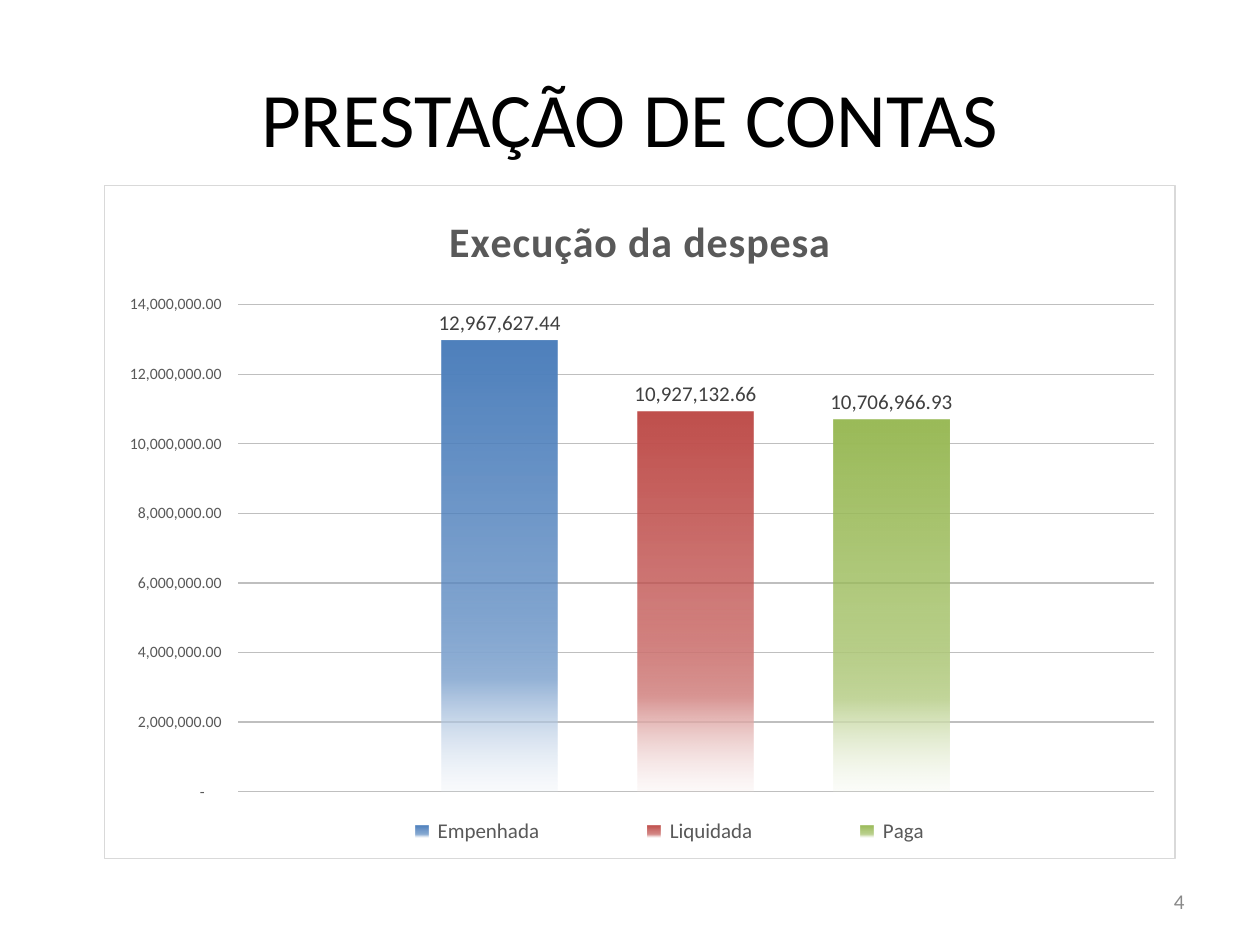
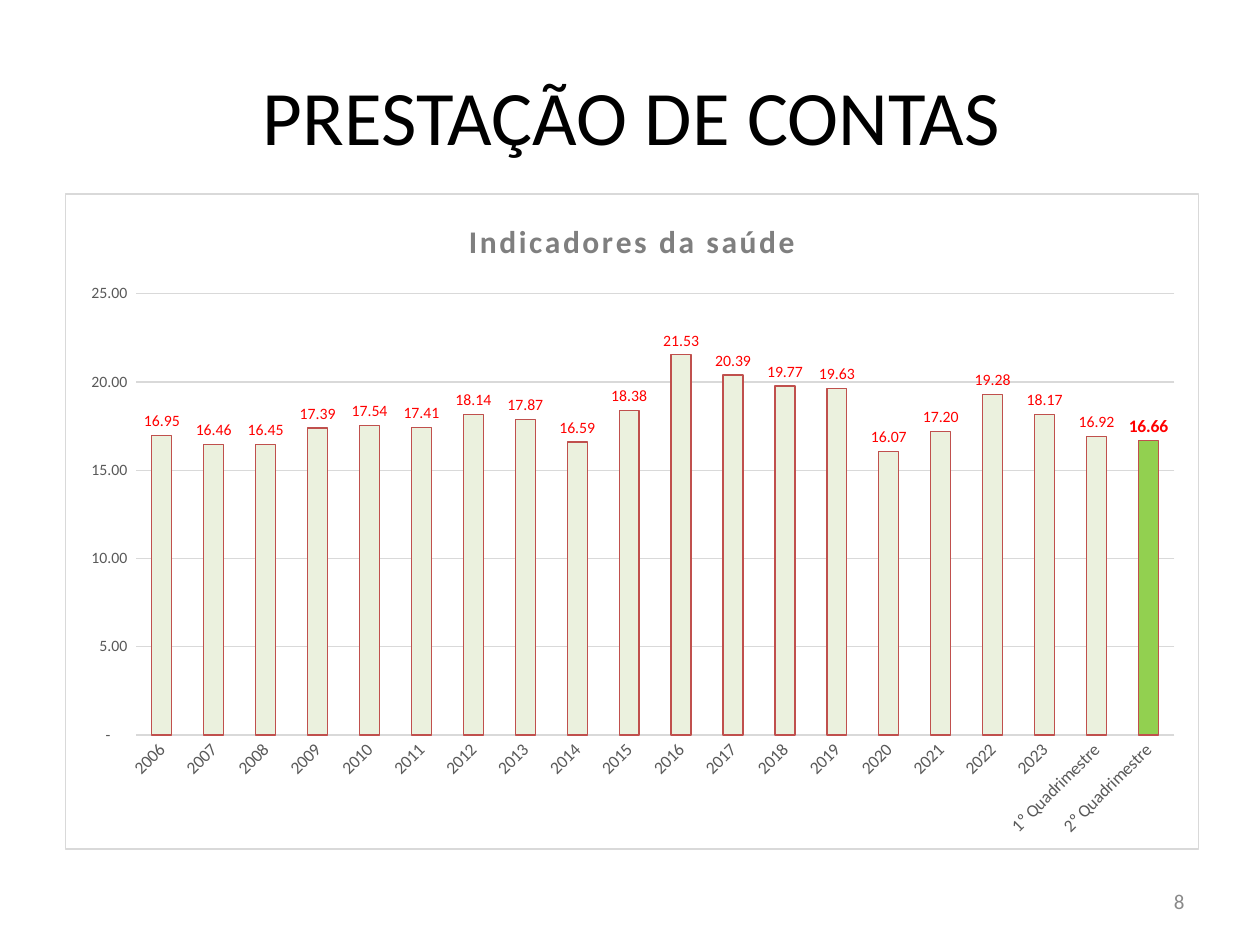
import pptx
import pptx.util
import pptx.dml.color
import pptx.enum.text
import pptx.enum.chart
import pptx.enum.shapes
import pptx.chart.data
import pptx.oxml
from dataclasses import dataclass

Cm, Pt = pptx.util.Cm, pptx.util.Pt
TICK = pptx.enum.chart.XL_TICK_MARK
LABEL = pptx.enum.chart.XL_LABEL_POSITION
ALIGN = pptx.enum.text.PP_ALIGN

# Content
TITLE = "PRESTAÇÃO DE CONTAS"
FORMAT = '_(* #,##0.00_);_(* \\(#,##0.00\\);_(* "-"??_);_(@_)'

SPEND = {
    "page": "4", "head": (1.27, 0.76), "box": (2.1, 3.73, 21.6, 13.59),
    "title": ("Execução da despesa", 24, "595959", 50),
    "cats": ["1"],
    "data": [(" Empenhada ", [12967627.44]),
             (" Liquidada ", [10927132.66]),
             (" Paga ", [10706966.93])],
    "top": 14000000, "step": 2000000, "grid": "BFBFBF",
    "gap": 355, "over": -70, "plot": (0.124, 0.177, 0.856, 0.724),
    "key": (0.2, 0.93, 0.66, 0.06),
    "label": (12, "404040"), "tick": TICK.OUTSIDE,
}
HEALTH = {
    "page": "8", "head": (1.3, 0.72), "box": (1.31, 3.9, 22.86, 13.23),
    "title": ("Indicadores da saúde", 18, "7F7F7F", 150),
    "cats": [str(year) for year in range(2006, 2024)]
            + ["1º Quadrimestre", "2º Quadrimestre"],
    "data": [("Series 1", [16.95, 16.46, 16.45, 17.39, 17.54, 17.41, 18.14,
                           17.87, 16.59, 18.38, 21.53, 20.39, 19.77, 19.63,
                           16.07, 17.20, 19.28, 18.17, 16.92, 16.66])],
    "top": 25, "step": 5, "grid": "D9D9D9",
    "gap": 160, "over": 0, "plot": (0.062, 0.152, 0.917, 0.674),
    "label": (9, "FF0000"), "tick": TICK.NONE,
}


@dataclass(frozen=True)
class Theme:
    font: str = "Calibri"
    ink: str = "000000"
    paper: str = "FFFFFF"
    gray: str = "595959"
    page: str = "898989"
    frame: str = "D9D9D9"
    bar: str = "EBF1DE"
    edge: str = "C0504D"
    last: str = "92D050"
    head_size: int = 44
    page_size: int = 12
    key_size: int = 12
    base_size: int = 10
    axis_size: int = 9
    # Each fade runs from a full tone through a mid tone to a pale one
    fades: tuple = (("4F81BD", "95B3D7", "DCE6F2"),
                    ("C0504D", "D99694", "F2DCDB"),
                    ("9BBB59", "C3D69B", "EBF1DE"))


theme = Theme()
SPACE = " ".join(f'xmlns:{key}="http://schemas.openxmlformats.org/drawingml/2006/{name}"'
                 for key, name in (("a", "main"), ("c", "chart")))


def rgb(tone):
    return pptx.dml.color.RGBColor.from_string(tone)


def style(font, size, tone, bold=False):
    font.name, font.size, font.bold = theme.font, Pt(size), bold
    font.color.rgb = rgb(tone)


def make(xml):
    return pptx.oxml.parse_xml(xml.replace(">", f" {SPACE}>", 1))


# Text shared by the slides
def write(shape, text, size, tone, align):
    frame = shape.text_frame
    frame.word_wrap = True
    frame.vertical_anchor = pptx.enum.text.MSO_ANCHOR.MIDDLE
    line = frame.paragraphs[0]
    line.alignment = align
    run = line.add_run()
    run.text = text
    style(run.font, size, tone)


def add_head(slide, place):
    shape = slide.shapes.add_shape(
        pptx.enum.shapes.MSO_SHAPE.RECTANGLE,
        *map(Cm, (*place, 22.86, 3.18)))
    shape.shadow.inherit = False
    shape.fill.solid()
    shape.fill.fore_color.rgb = rgb(theme.paper)
    shape.line.fill.background()
    write(shape, TITLE, theme.head_size, theme.ink, ALIGN.CENTER)


def add_page(slide, text):
    shape = slide.shapes.add_textbox(*map(Cm, (18.2, 17.66, 5.93, 1.01)))
    write(shape, text, theme.page_size, theme.page, ALIGN.RIGHT)


# Chart parts
def fade(series, tones):
    full, mid, pale = tones
    stops = ((0, full, 100), (51, full, 75), (75, mid, 100), (100, pale, 15))
    marks = "".join(
        f'<a:gs pos="{at * 1000}"><a:srgbClr val="{tone}">'
        f'<a:alpha val="{show * 1000}"/></a:srgbClr></a:gs>'
        for at, tone, show in stops)
    shape = series._element.get_or_add_spPr()
    shape.append(make(f'<a:gradFill><a:gsLst>{marks}</a:gsLst>'
                      '<a:lin ang="5400000" scaled="0"/></a:gradFill>'))
    series.format.line.fill.background()


def lay_out(part, spot, box, target=""):
    for old in part.findall(pptx.oxml.ns.qn("c:layout")):
        part.remove(old)
    sides = "".join(f'<c:{key} val="{size}"/>' for key, size in zip("xywh", box))
    part.insert(spot, make(
        f'<c:layout><c:manualLayout>{target}<c:xMode val="edge"/>'
        f'<c:yMode val="edge"/>{sides}</c:manualLayout></c:layout>'))


def frame_chart(chart, plot):
    area = chart._chartSpace.chart
    area.addnext(make(
        f'<c:spPr><a:solidFill><a:srgbClr val="{theme.paper}"/></a:solidFill>'
        f'<a:ln w="9525"><a:solidFill><a:srgbClr val="{theme.frame}"/>'
        '</a:solidFill></a:ln></c:spPr>'))
    lay_out(area.plotArea, 0, plot, '<c:layoutTarget val="inner"/>')


def draw_chart(slide, part):
    data = pptx.chart.data.CategoryChartData(number_format=FORMAT)
    data.categories = part["cats"]
    for name, nums in part["data"]:
        data.add_series(name, nums)
    chart = slide.shapes.add_chart(
        pptx.enum.chart.XL_CHART_TYPE.COLUMN_CLUSTERED,
        *map(Cm, part["box"]), data).chart
    style(chart.font, theme.base_size, theme.ink)
    frame_chart(chart, part["plot"])

    # Title
    text, size, tone, track = part["title"]
    run = chart.chart_title.text_frame.paragraphs[0].add_run()
    run.text = text
    style(run.font, size, tone, True)
    run._r.get_or_add_rPr().set("spc", str(track))
    chart.chart_title.include_in_layout = False

    # Value axis
    axis = chart.value_axis
    axis.minimum_scale, axis.maximum_scale = 0, part["top"]
    axis.major_unit = part["step"]
    axis.major_tick_mark = part["tick"]
    axis.format.line.fill.background()
    style(axis.tick_labels.font, theme.axis_size, theme.gray)
    axis.tick_labels.number_format = FORMAT
    axis.tick_labels.number_format_is_linked = False
    grid = axis.major_gridlines.format.line
    grid.width, grid.color.rgb = Pt(0.75), rgb(part["grid"])

    # Bars and labels
    plot = chart.plots[0]
    plot.vary_by_categories = False
    plot.gap_width, plot.overlap = part["gap"], part["over"]
    for series in plot.series:
        series.invert_if_negative = False
        tags = series.data_labels
        tags.show_value = True
        tags.position = LABEL.OUTSIDE_END
        tags.number_format, tags.number_format_is_linked = FORMAT, False
        style(tags.font, *part["label"])
    return chart


def draw_spend(slide):
    chart = draw_chart(slide, SPEND)
    chart.category_axis.visible = False
    for series, tones in zip(chart.plots[0].series, theme.fades):
        fade(series, tones)
    chart.has_legend = True
    key = chart.legend
    key.position = pptx.enum.chart.XL_LEGEND_POSITION.BOTTOM
    key.include_in_layout = False
    style(key.font, theme.key_size, theme.gray)
    lay_out(key._element, 1, SPEND["key"])


def draw_health(slide):
    chart = draw_chart(slide, HEALTH)
    chart.has_legend = False
    axis = chart.category_axis
    axis.major_tick_mark = TICK.NONE
    axis.format.line.fill.background()
    style(axis.tick_labels.font, theme.base_size, theme.gray)
    axis._element.txPr.bodyPr.set("rot", "-2700000")

    # The latest bar stands out
    series = chart.plots[0].series[0]
    last = series.points[len(HEALTH["cats"]) - 1]
    for item, tone in ((series, theme.bar), (last, theme.last)):
        item.format.fill.solid()
        item.format.fill.fore_color.rgb = rgb(tone)
        item.format.line.width = Pt(0.75)
        item.format.line.color.rgb = rgb(theme.edge)
    style(last.data_label.font, theme.base_size, HEALTH["label"][1], True)
    last.data_label.position = LABEL.OUTSIDE_END


def main():
    deck = pptx.Presentation()
    deck.slide_width, deck.slide_height = Cm(25.4), Cm(19.05)
    for part, draw in ((SPEND, draw_spend), (HEALTH, draw_health)):
        slide = deck.slides.add_slide(deck.slide_layouts[6])
        add_page(slide, part["page"])
        add_head(slide, part["head"])
        draw(slide)
    deck.save("out.pptx")


if __name__ == "__main__":
    main()
